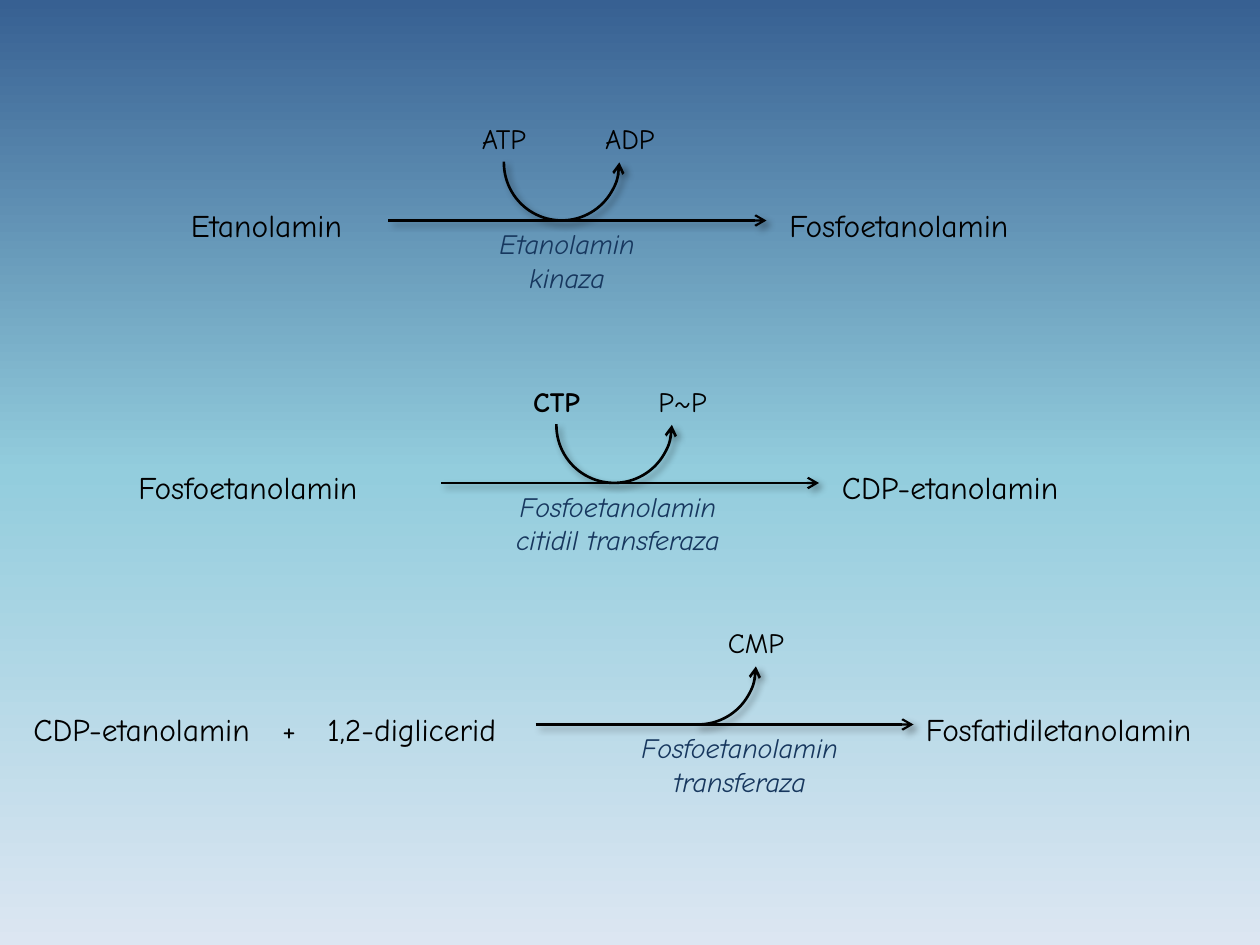
from dataclasses import dataclass
from typing import Optional

from lxml.etree import SubElement
from pptx import Presentation
from pptx.dml.color import RGBColor
from pptx.enum.shapes import MSO_CONNECTOR as CONN, MSO_SHAPE as SHAPE
from pptx.enum.text import MSO_AUTO_SIZE as AUTO, PP_ALIGN as ALIGN
from pptx.oxml.ns import qn
from pptx.util import Emu, Pt

PX = 914400 // 120  # 120 px to the inch
FONT = "Comic Neue"
BLACK, NAVY = "000000", "17375E"
SKY = [(0, "376092"), (50, "93CDDD"), (100, "DCE6F2")]

ARROW_LEN, ARC_SIZE = 360, 110
LABEL_H, COFACTOR_W, COFACTOR_H, ENZYME_H = 48, 80, 50, 77
ARC_START, HALF_TURN, QUARTER_TURN = 215.8, 108.62, 55.02


@dataclass
class Label:
    text: str
    x: int
    w: int


@dataclass
class Reaction:
    y: int                    # height of the main arrow
    arrow_x: int
    arc_x: int
    labels: list[Label]       # substrates and product
    enzyme: list[str]
    enzyme_x: int
    enzyme_w: int
    released: Label
    consumed: Optional[Label] = None
    consumed_bold: bool = False


REACTIONS = [
    Reaction(210, 370, 480,
             [Label("Etanolamin", 170, 176), Label("Fosfoetanolamin", 740, 254)],
             ["Etanolamin", "kinaza"], 460, 160,
             Label("ADP", 560, COFACTOR_W), Label("ATP", 440, COFACTOR_W)),
    Reaction(460, 420, 530,
             [Label("Fosfoetanolamin", 120, 254), Label("CDP-etanolamin", 790, 242)],
             ["Fosfoetanolamin", "citidil transferaza"], 460, 257,
             Label("P~P", 610, COFACTOR_W), Label("CTP", 490, COFACTOR_W), True),
    Reaction(690, 510, 610,
             [Label("CDP-etanolamin", 20, 242), Label("+", 257, 36),
              Label("1,2-diglicerid", 300, 209), Label("Fosfatidiletanolamin", 870, 311)],
             ["Fosfoetanolamin", "transferaza"], 590, 229,
             Label("CMP", 680, COFACTOR_W)),
]


def px(n: int) -> Emu:
    return Emu(n * PX)


def rgb(color: str) -> RGBColor:
    return RGBColor.from_string(color)


def paint_background(slide) -> None:
    fill = slide.background.fill
    fill.gradient()
    fill.gradient_angle = 270
    stops = slide.element.find(".//" + qn("a:gsLst"))
    for old in list(stops):
        stops.remove(old)
    for pos, color in SKY:
        gs = SubElement(stops, qn("a:gs"), pos=str(pos * 1000))
        SubElement(gs, qn("a:srgbClr"), val=color)


def style_line(sp, width: float, end: str) -> None:
    """Black line with an open arrowhead at one end and a soft shadow."""
    sp.line.color.rgb = rgb(BLACK)
    sp.line.width = Pt(width)
    sp_pr = sp._element.spPr
    SubElement(sp_pr.find(qn("a:ln")), qn(end), type="arrow")
    for old in sp_pr.findall(qn("a:effectLst")):
        sp_pr.remove(old)
    effects = SubElement(sp_pr, qn("a:effectLst"))
    shadow = SubElement(effects, qn("a:outerShdw"), blurRad=str(Pt(4)),
                        dist=str(Pt(3)), dir=str(45 * 60000), rotWithShape="0")
    color = SubElement(shadow, qn("a:srgbClr"), val=BLACK)
    SubElement(color, qn("a:alpha"), val="40000")


def add_text(slide, lines: list[str], x: int, y: int, w: int, h: int, size: int,
             color: str = BLACK, align=ALIGN.CENTER, wrap: bool = False,
             bold: bool = False, italic: bool = False) -> None:
    tf = slide.shapes.add_textbox(px(x), px(y), px(w), px(h)).text_frame
    tf.word_wrap = wrap
    tf.auto_size = AUTO.NONE if wrap else AUTO.SHAPE_TO_FIT_TEXT
    for i, line in enumerate(lines):
        p = tf.add_paragraph() if i else tf.paragraphs[0]
        p.alignment = align
        r = p.add_run()
        r.text = line
        r.font.name, r.font.size = FONT, Pt(size)
        r.font.bold, r.font.italic = bold, italic
        r.font.color.rgb = rgb(color)


def add_arrow(slide, x: int, y: int) -> None:
    sp = slide.shapes.add_connector(CONN.STRAIGHT, px(x), px(y), px(x + ARROW_LEN), px(y))
    style_line(sp, 1.25, "a:tailEnd")


def add_arc(slide, x: int, y: int, end_angle: float) -> None:
    sp = slide.shapes.add_shape(SHAPE.ARC, px(x), px(y), px(ARC_SIZE), px(ARC_SIZE))
    sp.adjustments[0], sp.adjustments[1] = ARC_START, end_angle
    sp.fill.background()
    style_line(sp, 1.5, "a:headEnd")


def add_cofactor(slide, label: Label, y: int, bold: bool = False) -> None:
    add_text(slide, [label.text], label.x, y, label.w, COFACTOR_H, 16, wrap=True, bold=bold)


def draw_reaction(slide, rx: Reaction) -> None:
    # Substrates and product
    for label in rx.labels:
        add_text(slide, [label.text], label.x, rx.y - 20, label.w, LABEL_H, 18,
                 align=ALIGN.LEFT)
    # Main arrow and cofactor arc resting on it
    add_arrow(slide, rx.arrow_x, rx.y)
    add_arc(slide, rx.arc_x, rx.y - ARC_SIZE, HALF_TURN if rx.consumed else QUARTER_TURN)
    # Cofactors
    add_cofactor(slide, rx.released, rx.y - 100)
    if rx.consumed:
        add_cofactor(slide, rx.consumed, rx.y - 100, rx.consumed_bold)
    # Enzyme
    add_text(slide, rx.enzyme, rx.enzyme_x, rx.y, rx.enzyme_w, ENZYME_H, 16,
             color=NAVY, italic=True)


def main() -> None:
    prs = Presentation()
    prs.slide_width, prs.slide_height = px(1200), px(900)
    slide = prs.slides.add_slide(prs.slide_layouts[6])
    paint_background(slide)
    for rx in REACTIONS:
        draw_reaction(slide, rx)
    prs.save("out.pptx")


if __name__ == "__main__":
    main()
